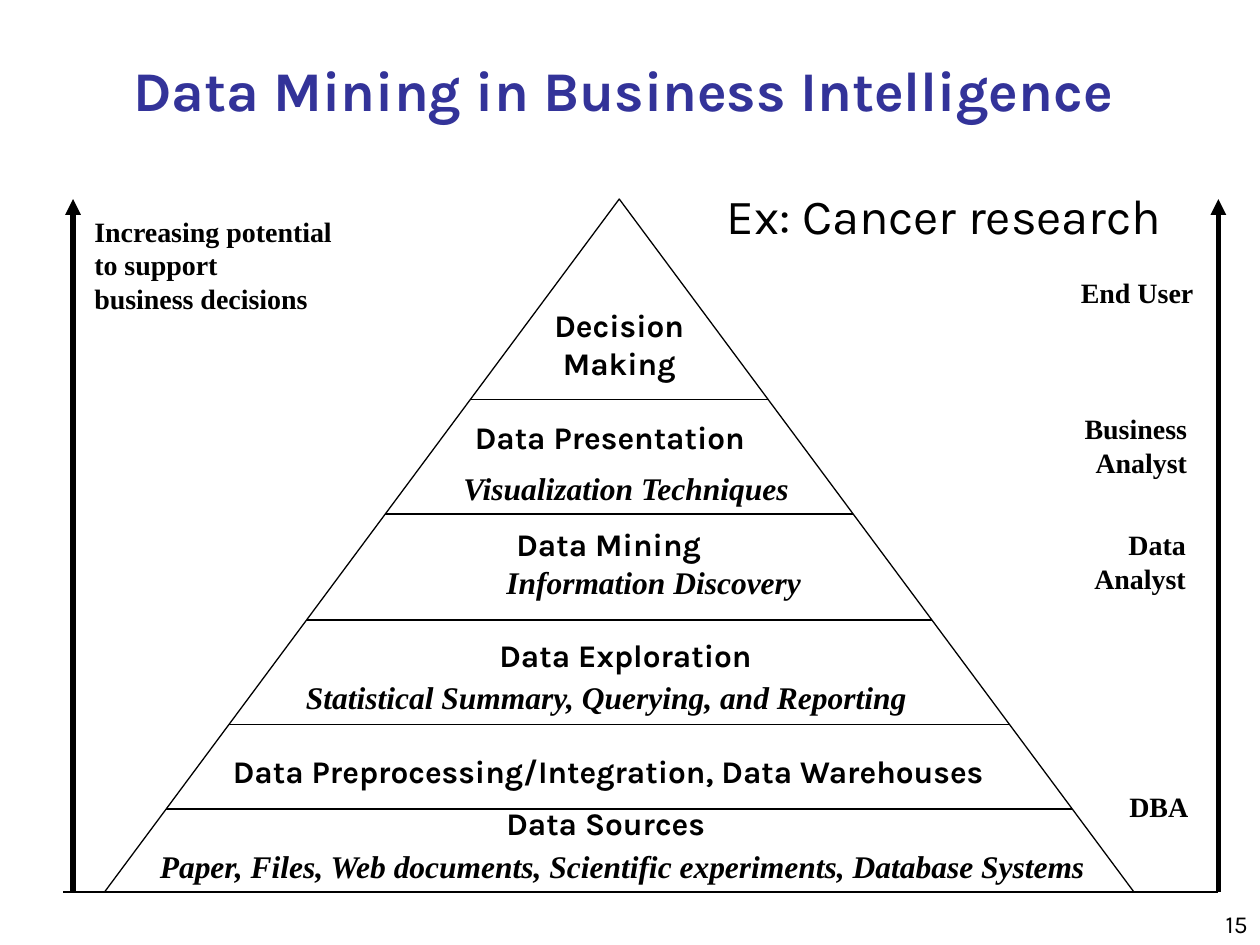
from pptx import Presentation
from pptx.dml.color import RGBColor
from pptx.enum.shapes import MSO_CONNECTOR as CONN, MSO_SHAPE as SHAPE
from pptx.enum.text import MSO_ANCHOR as ANCHOR, MSO_AUTO_SIZE as AUTOSIZE, PP_ALIGN as ALIGN
from pptx.oxml.ns import qn
from pptx.util import Inches, Pt
from lxml import etree

BLACK = RGBColor(0x00, 0x00, 0x00)
INDIGO = RGBColor(0x33, 0x33, 0x99)
SANS = "Karla"
SERIF = "Times New Roman"


class SlideBuilder:
    def __init__(self, prs):
        self.slide = prs.slides.add_slide(prs.slide_layouts[5])

    def fill_text(self, tf, lines, size, font, bold=False, italic=False,
                  align=ALIGN.LEFT, color=BLACK):
        for i, line in enumerate(lines):
            p = tf.paragraphs[0] if i == 0 else tf.add_paragraph()
            p.alignment = align
            r = p.add_run()
            r.text = line
            f = r.font
            f.name, f.size, f.bold, f.italic = font, Pt(size), bold, italic
            f.color.rgb = color

    def title(self, text, x, y, w, h):
        sp = self.slide.shapes.title
        sp.left, sp.top, sp.width, sp.height = map(Inches, (x, y, w, h))
        tf = sp.text_frame
        tf.word_wrap = True
        tf.auto_size = AUTOSIZE.NONE
        tf.vertical_anchor = ANCHOR.MIDDLE
        self.fill_text(tf, [text], 32, SANS, bold=True, align=ALIGN.CENTER, color=INDIGO)

    def text(self, lines, x, y, w, h, size, font, wrap=False, anchor=ANCHOR.TOP, **style):
        tf = self.slide.shapes.add_textbox(*map(Inches, (x, y, w, h))).text_frame
        tf.word_wrap = wrap
        tf.vertical_anchor = anchor
        self.fill_text(tf, lines, size, font, **style)

    def triangle(self, x, y, w, h):
        sp = self.slide.shapes.add_shape(SHAPE.FLOWCHART_EXTRACT, *map(Inches, (x, y, w, h)))
        sp.shadow.inherit = False
        sp.fill.background()
        sp.line.color.rgb = BLACK
        sp.line.width = Pt(0.75)

    def line(self, x1, y1, x2, y2, width=0.75, arrow=False):
        c = self.slide.shapes.add_connector(CONN.STRAIGHT, *map(Inches, (x1, y1, x2, y2)))
        c.line.color.rgb = BLACK
        c.line.width = Pt(width)
        if arrow:
            etree.SubElement(c.line._get_or_add_ln(), qn("a:tailEnd"), type="triangle")
        etree.SubElement(c._element.spPr, qn("a:effectLst"))


def main():
    prs = Presentation()
    prs.slide_width, prs.slide_height = Inches(10), Inches(7.5)
    s = SlideBuilder(prs)

    # Title and page number
    s.title("Data Mining in Business Intelligence", 0.2, 0.42, 9.5, 0.58)
    s.text(["15"], 7.92, 7, 2.08, 0.5, 14, SANS, wrap=True,
           anchor=ANCHOR.BOTTOM, align=ALIGN.RIGHT)

    # Pyramid, with dividers that reach its sloping sides
    left, top, width, height = 0.83, 1.58, 8.17, 5.5
    base, middle = top + height, left + width / 2
    s.triangle(left, top, width, height)
    for y in (6.42, 5.75, 4.92, 4.08, 3.17):
        half = width / 2 * (y - top) / height
        s.line(middle - half, y, middle + half, y)

    # Side arrows and base line
    for x in (0.58, 9.67):
        s.line(x, base, x, top, width=3, arrow=True)
    s.line(0.5, base, 9.67, base)

    # Left caption and the roles on the right
    s.text(["Increasing potential", "to support", "business decisions"],
           0.65, 1.65, 2.1, 0.9, 16, SERIF, bold=True)
    roles = [
        (["End User"], 8.47, 2.14, 1.1, 0.37),
        (["Business", "Analyst"], 8.48, 3.22, 1.04, 0.64),
        (["Data", "Analyst"], 8.57, 4.14, 0.94, 0.64),
        (["DBA"], 8.86, 6.22, 0.67, 0.37),
    ]
    for lines, *box in roles:
        s.text(lines, *box, 16, SERIF, bold=True, align=ALIGN.RIGHT)

    # Level names: text, left, top, width, wrap, alignment
    levels = [
        ("Decision Making", 4.25, 2.38, 1.33, True, ALIGN.CENTER),
        ("Data Presentation", 3.67, 3.27, 2.47, False, ALIGN.LEFT),
        ("Data Mining", 4, 4.12, 1.95, True, ALIGN.LEFT),
        ("Data Exploration", 3.68, 5, 2.57, True, ALIGN.CENTER),
        ("Data Preprocessing/Integration, Data Warehouses", 1.75, 5.92, 6.59, False, ALIGN.LEFT),
        ("Data Sources", 3.92, 6.33, 1.86, False, ALIGN.LEFT),
    ]
    for name, x, y, w, wrap, align in levels:
        s.text([name], x, y, w, 0.4, 18, SANS, wrap=wrap, bold=True, align=align)

    # Level details: text, left, top, width, wrap
    details = [
        ("Visualization Techniques", 3.58, 3.67, 2.82, False),
        ("Information Discovery", 3.92, 4.42, 2.54, False),
        ("Statistical Summary, Querying, and Reporting", 2.33, 5.33, 5, True),
        ("Paper, Files, Web documents, Scientific experiments, Database Systems",
         1.17, 6.67, 7.78, True),
    ]
    for detail, x, y, w, wrap in details:
        s.text([detail], x, y, w, 0.4, 18, SERIF, wrap=wrap, bold=True, italic=True)

    # Example
    s.text(["Ex: Cancer research"], 5.67, 1.42, 3.66, 0.57, 28, SANS)

    prs.save("out.pptx")


if __name__ == "__main__":
    main()
